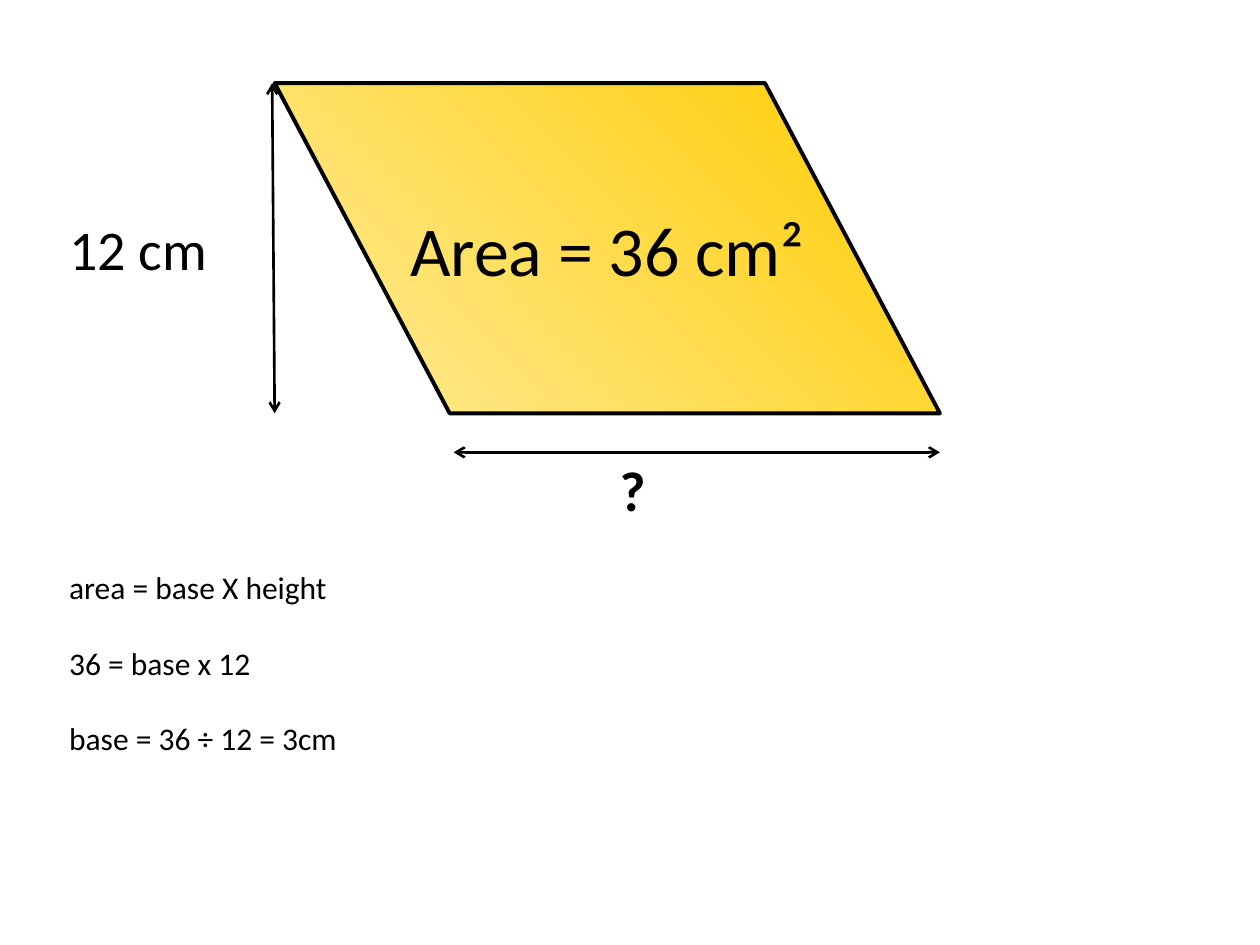
import pptx
import pptx.dml.color
import pptx.enum.shapes
import pptx.enum.text
import pptx.oxml.ns
import pptx.util
from lxml import etree

Inches, Pt = pptx.util.Inches, pptx.util.Pt

COLOURS = {"ink": "000000", "deep": "FFCC00", "pale": "FFEC9B"}
FONT = "Calibri"

AREA = "Area = 36 cm²"
WORKING = ["area = base X height", "36 = base x 12", "base = 36 ÷ 12 = 3cm"]

# Parallelogram: left, top, width, height; slant is a share of the height
LEFT, TOP, WIDTH, HEIGHT = 2.18, 0.66, 5.28, 2.62
SLANT = 0.53
RIGHT, BOTTOM = LEFT + WIDTH, TOP + HEIGHT
MARGIN = 0.45

# lines, (left, top, width, height), size, bold
LABELS = [
    (["12 cm"], (MARGIN, 1.65, 1.42, 0.64), 32, False),
    (["?"], (4.82, 3.57, 1.3, 0.64), 32, True),
    (WORKING, (MARGIN, 4.46, 7.62, 1.62), 18, False),
]
# start, end
DIMENSIONS = [
    ((LEFT - 0.02, TOP), (LEFT, BOTTOM)),
    ((3.6, BOTTOM + 0.31), (RIGHT, BOTTOM + 0.31)),
]


def colour(name):
    return pptx.dml.color.RGBColor.from_string(COLOURS[name])


def write(frame, lines, size, bold=False):
    frame.text = "\n".join(lines)
    for index, paragraph in enumerate(frame.paragraphs):
        if index:
            paragraph.space_before = Pt(size * 1.2)
        font = paragraph.runs[0].font
        font.name, font.size, font.bold = FONT, Pt(size), bold
        font.color.rgb = colour("ink")


def add_parallelogram(slide):
    figure = slide.shapes.add_shape(
        pptx.enum.shapes.MSO_SHAPE.PARALLELOGRAM,
        *map(Inches, (LEFT, TOP, WIDTH, HEIGHT)))
    figure.adjustments[0] = SLANT
    figure.rotation = 180
    figure.element.spPr.find(pptx.oxml.ns.qn("a:xfrm")).set("flipV", "1")
    figure.shadow.inherit = False
    figure.fill.gradient()
    figure.fill.gradient_angle = 315
    for stop, name in zip(figure.fill.gradient_stops, ("deep", "pale")):
        stop.color.rgb = colour(name)
    figure.line.color.rgb = colour("ink")
    figure.line.width = Pt(2.25)
    frame = figure.text_frame
    frame.word_wrap = False
    frame.vertical_anchor = pptx.enum.text.MSO_ANCHOR.MIDDLE
    write(frame, [AREA], 40)
    frame.paragraphs[0].alignment = pptx.enum.text.PP_ALIGN.CENTER


def add_dimension(slide, start, end):
    """Draw a line with an arrowhead at both ends."""
    arrow = slide.shapes.add_connector(
        pptx.enum.shapes.MSO_CONNECTOR.STRAIGHT, *map(Inches, start + end))
    arrow.line.color.rgb = colour("ink")
    arrow.line.width = Pt(1.5)
    outline = arrow.line._get_or_add_ln()
    for tag in ("a:headEnd", "a:tailEnd"):
        etree.SubElement(outline, pptx.oxml.ns.qn(tag), type="arrow")
    etree.SubElement(arrow.element.spPr, pptx.oxml.ns.qn("a:effectLst"))


def add_label(slide, lines, box, size, bold):
    frame = slide.shapes.add_textbox(*map(Inches, box)).text_frame
    frame.word_wrap = True
    write(frame, lines, size, bold)


def main():
    deck = pptx.Presentation()
    deck.slide_width, deck.slide_height = Inches(10), Inches(7.5)
    slide = deck.slides.add_slide(deck.slide_layouts[6])
    add_parallelogram(slide)
    for start, end in DIMENSIONS:
        add_dimension(slide, start, end)
    for label in LABELS:
        add_label(slide, *label)
    deck.save("out.pptx")


if __name__ == "__main__":
    main()
